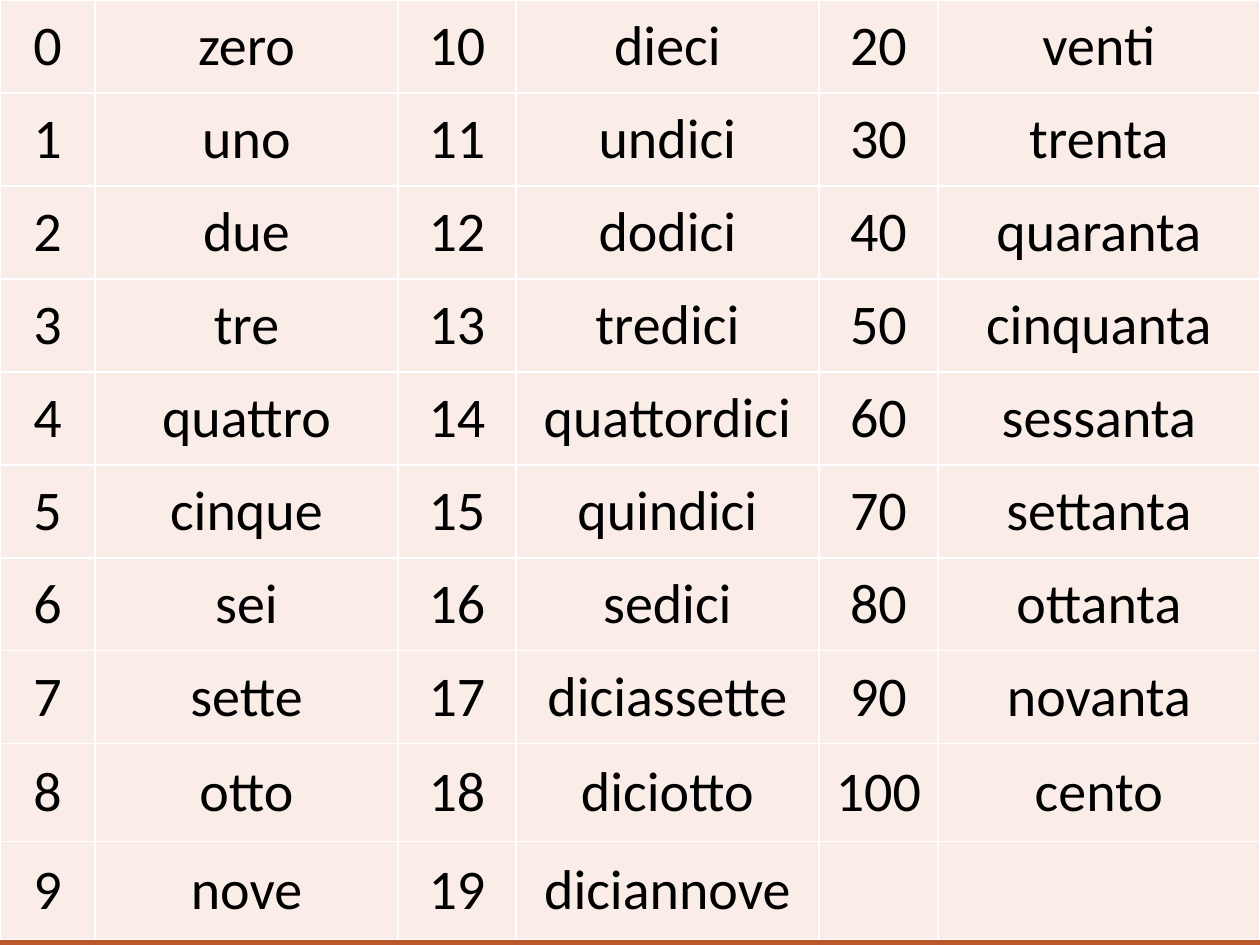
from itertools import zip_longest

from lxml import etree
from pptx import Presentation
from pptx.dml.color import RGBColor
from pptx.enum.shapes import MSO_SHAPE
from pptx.enum.text import MSO_ANCHOR, PP_ALIGN
from pptx.oxml.ns import qn
from pptx.util import Emu, Pt

RECTANGLE = MSO_SHAPE.RECTANGLE
MIDDLE = MSO_ANCHOR.MIDDLE
CENTER = PP_ALIGN.CENTER

BLACK = RGBColor(0x00, 0x00, 0x00)
WHITE = RGBColor(0xFF, 0xFF, 0xFF)
BLUSH = RGBColor(0xFA, 0xED, 0xE7)
RUST = RGBColor(0xBD, 0x58, 0x2C)

EMU_PER_PX = 914400 / 126
WIDTH, HEIGHT = 1260, 945
FOOTER_HEIGHT = 63
COLUMN_WIDTHS = [95, 303, 118, 303, 119, 322]
ROW_HEIGHTS = [93] * 8 + [98] * 2

UNITS = "zero uno due tre quattro cinque sei sette otto nove".split()
TEENS = ("dieci undici dodici tredici quattordici quindici sedici "
         "diciassette diciotto diciannove").split()
TENS = ("venti trenta quaranta cinquanta sessanta settanta ottanta "
        "novanta cento").split()


def px(length):
    return Emu(round(length * EMU_PER_PX))


def apply_format(target, values):
    for name, value in values.items():
        setattr(target, name, value)


class SlideBuilder:
    font_format = {"name": "Calibri", "size": Pt(32)}
    cell_format = {
        "vertical_anchor": MIDDLE,
        "margin_left": px(6),
        "margin_right": px(6),
        "margin_top": 0,
        "margin_bottom": 0,
    }
    border_width = Pt(1)

    def __init__(self, slide):
        self.slide = slide

    def rectangle(self, left, top, width, height, color):
        shape = self.slide.shapes.add_shape(
            RECTANGLE, px(left), px(top), px(width), px(height))
        shape.shadow.inherit = False
        shape.fill.solid()
        shape.fill.fore_color.rgb = color
        shape.line.fill.background()

    def table(self, left, top, column_widths, row_heights, rows):
        table = self.slide.shapes.add_table(
            len(row_heights), len(column_widths), px(left), px(top),
            px(sum(column_widths)), px(sum(row_heights))).table
        table.first_row = table.horz_banding = False
        for column, width in zip(table.columns, column_widths):
            column.width = px(width)
        for row, height, texts in zip(table.rows, row_heights, rows):
            row.height = px(height)
            for cell, text in zip(row.cells, texts):
                self.cell(cell, text)

    def cell(self, cell, text):
        apply_format(cell, self.cell_format)
        self.borders(cell)
        cell.fill.solid()
        cell.fill.fore_color.rgb = BLUSH
        paragraph = cell.text_frame.paragraphs[0]
        paragraph.alignment = CENTER
        if text:
            run = paragraph.add_run()
            run.text = text
            apply_format(run.font, self.font_format)
            run.font.color.rgb = BLACK

    def borders(self, cell):
        """Draw all four cell edges; called before the fill, which must follow them."""
        properties = cell._tc.get_or_add_tcPr()
        for edge in ("a:lnL", "a:lnR", "a:lnT", "a:lnB"):
            line = etree.SubElement(properties, qn(edge), w=str(self.border_width))
            fill = etree.SubElement(line, qn("a:solidFill"))
            etree.SubElement(fill, qn("a:srgbClr"), val=str(WHITE))


def number_rows():
    """Pair each numeral with its word, in three groups side by side."""
    groups = [
        [(str(start + step * index), word) for index, word in enumerate(words)]
        for start, step, words in ((0, 1, UNITS), (10, 1, TEENS), (20, 10, TENS))
    ]
    return [sum(pairs, ()) for pairs in zip_longest(*groups, fillvalue=("", ""))]


def main():
    presentation = Presentation()
    presentation.slide_width = px(WIDTH)
    presentation.slide_height = px(HEIGHT)
    blank_layout = presentation.slide_layouts[6]
    builder = SlideBuilder(presentation.slides.add_slide(blank_layout))
    builder.rectangle(0, HEIGHT - FOOTER_HEIGHT, WIDTH, FOOTER_HEIGHT, RUST)
    builder.table(0, 0, COLUMN_WIDTHS, ROW_HEIGHTS, number_rows())
    presentation.save("out.pptx")


if __name__ == "__main__":
    main()
